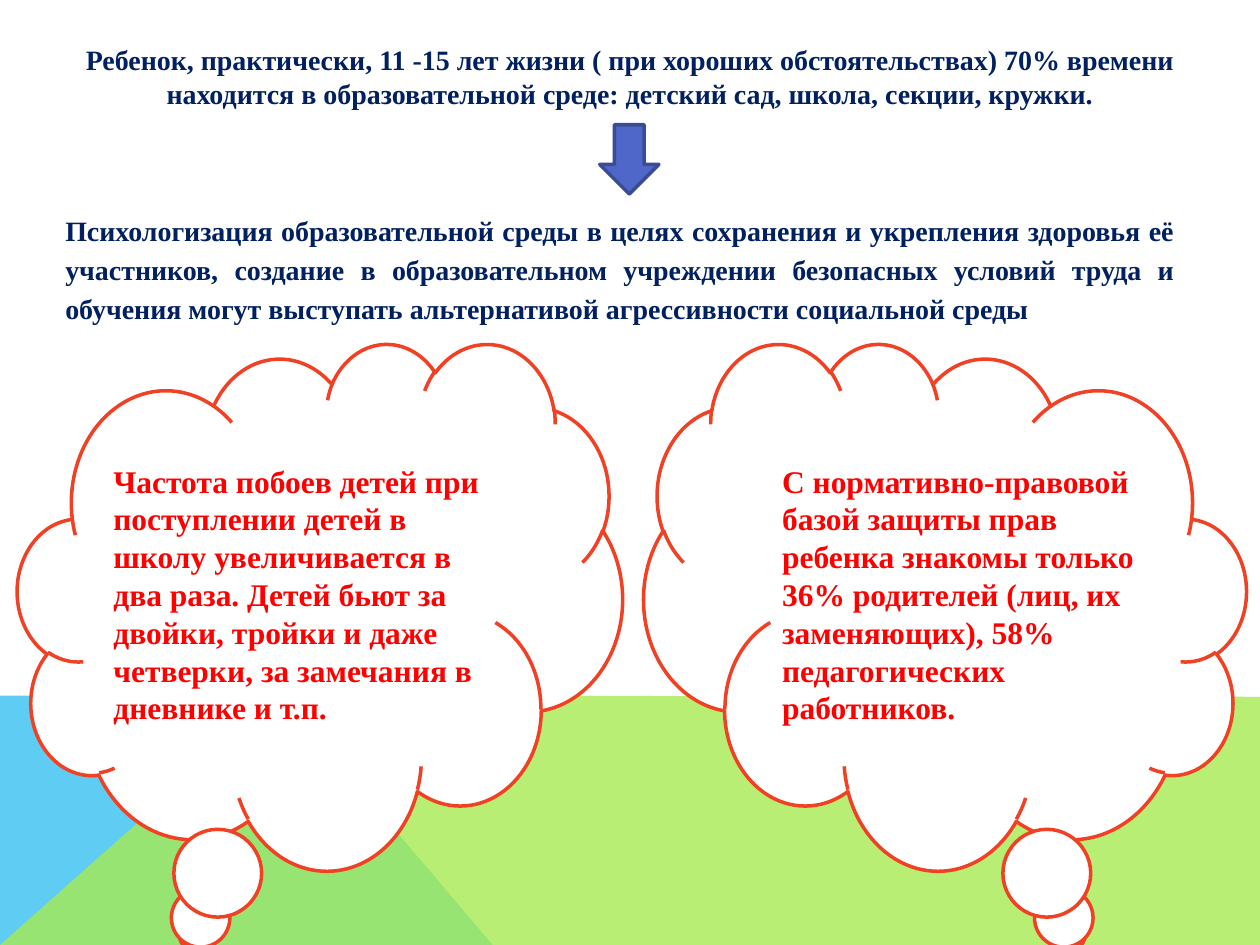
"""Build a slide on the educational environment with two thought clouds."""
import pptx
import pptx.dml.color
import pptx.enum.shapes
import pptx.enum.text
import pptx.oxml
import pptx.oxml.ns
import pptx.util

Inches = pptx.util.Inches
Pt = pptx.util.Pt
Shape = pptx.enum.shapes.MSO_SHAPE
Align = pptx.enum.text.PP_ALIGN
Anchor = pptx.enum.text.MSO_ANCHOR


def color(value):
    return pptx.dml.color.RGBColor.from_string(value)


def write(box, text, size, ink, align, anchor):
    frame = box.text_frame
    frame.word_wrap = True
    frame.vertical_anchor = anchor
    frame.text = text
    para = frame.paragraphs[0]
    para.alignment = align
    font = para.runs[0].font
    font.name = "Times New Roman"
    font.size = Pt(size)
    font.bold = True
    font.color.rgb = color(ink)
    return para


deck = pptx.Presentation()
deck.slide_width = Inches(10)
deck.slide_height = Inches(7.5)
page = deck.slides.add_slide(deck.slide_layouts[6])

bands = [
    ("5ECCF3", 100, [(0, 7.5), (0, 5.52), (2.23, 5.52), (3.91, 7.5)]),
    ("A7EA52", 80, [(0, 7.5), (2.23, 5.52), (10, 5.53), (10, 7.5)]),
]
for fill, opacity, corners in bands:
    points = [(Inches(x), Inches(y)) for x, y in corners]
    builder = page.shapes.build_freeform(*points[0])
    builder.add_line_segments(points[1:], close=True)
    band = builder.convert_to_shape()
    band.shadow.inherit = False
    band.fill.solid()
    band.fill.fore_color.rgb = color(fill)
    band.line.fill.background()
    if opacity < 100:
        tint = band.fill._xPr.find(".//" + pptx.oxml.ns.qn("a:srgbClr"))
        alpha = pptx.oxml.parse_xml(
            f'<a:alpha {pptx.oxml.ns.nsdecls("a")} val="{opacity * 1000}"/>')
        tint.append(alpha)

statements = [
    (0.5, 0.29, 0.71, Align.CENTER, 1.0,
     "Ребенок, практически, 11 -15 лет жизни ( при хороших обстоятельствах) 70% времени "
     "находится в образовательной среде: детский сад, школа, секции, кружки."),
    (0.42, 1.61, 1.1, Align.JUSTIFY, 1.15,
     "Психологизация образовательной среды в целях сохранения и укрепления здоровья её "
     "участников, создание в образовательном учреждении безопасных условий труда и "
     "обучения могут выступать альтернативой агрессивности социальной среды"),
]
for left, top, height, align, spacing, text in statements:
    box = page.shapes.add_textbox(Inches(left), Inches(top), Inches(9), Inches(height))
    para = write(box, text, 16, "002060", align, Anchor.TOP)
    para.line_spacing = spacing
    para.space_before = Pt(8)

arrow = page.shapes.add_shape(
    Shape.DOWN_ARROW, Inches(4.76), Inches(0.99), Inches(0.47), Inches(0.55))
arrow.shadow.inherit = False
arrow.fill.solid()
arrow.fill.fore_color.rgb = color("4E67C8")
arrow.line.color.rgb = color("3A4C94")
arrow.line.width = Pt(2)

clouds = [
    (0.14, 4.8, False,
     "Частота побоев детей при поступлении детей в школу увеличивается в два раза. "
     "Детей бьют за двойки, тройки и даже четверки, за замечания в дневнике и т.п."),
    (5.11, 4.78, True,
     "С нормативно-правовой базой защиты прав ребенка знакомы только 36% родителей "
     "(лиц, их заменяющих), 58% педагогических работников."),
]
for left, width, mirrored, text in clouds:
    cloud = page.shapes.add_shape(
        Shape.CLOUD_CALLOUT, Inches(left), Inches(2.72), Inches(width), Inches(4.18))
    cloud.shadow.inherit = False
    cloud.fill.solid()
    cloud.fill.fore_color.rgb = color("FFFFFF")
    cloud.line.color.rgb = color("F14124")
    cloud.line.width = Pt(2)
    if mirrored:
        cloud._element.spPr.xfrm.set("flipH", "1")
    write(cloud, text, 18, "FF0000", Align.LEFT, Anchor.MIDDLE)

deck.save("out.pptx")
